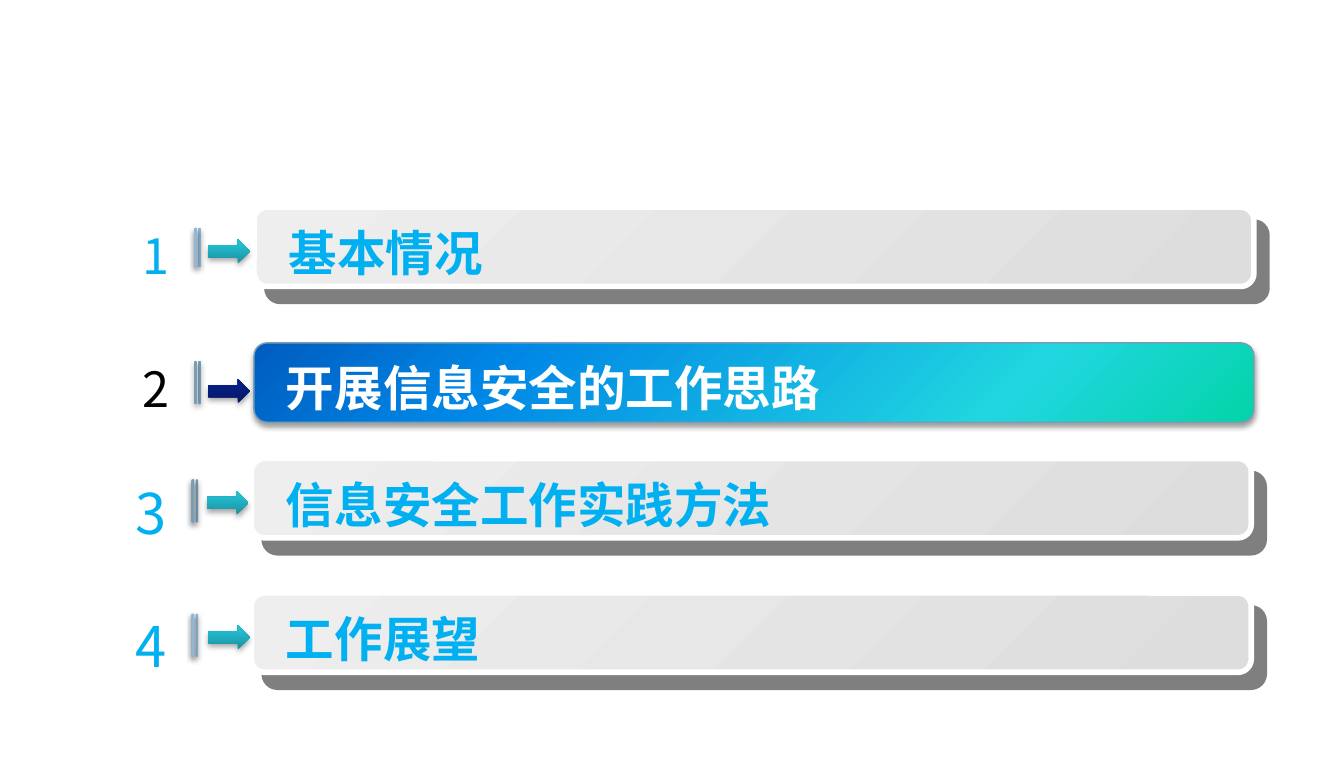
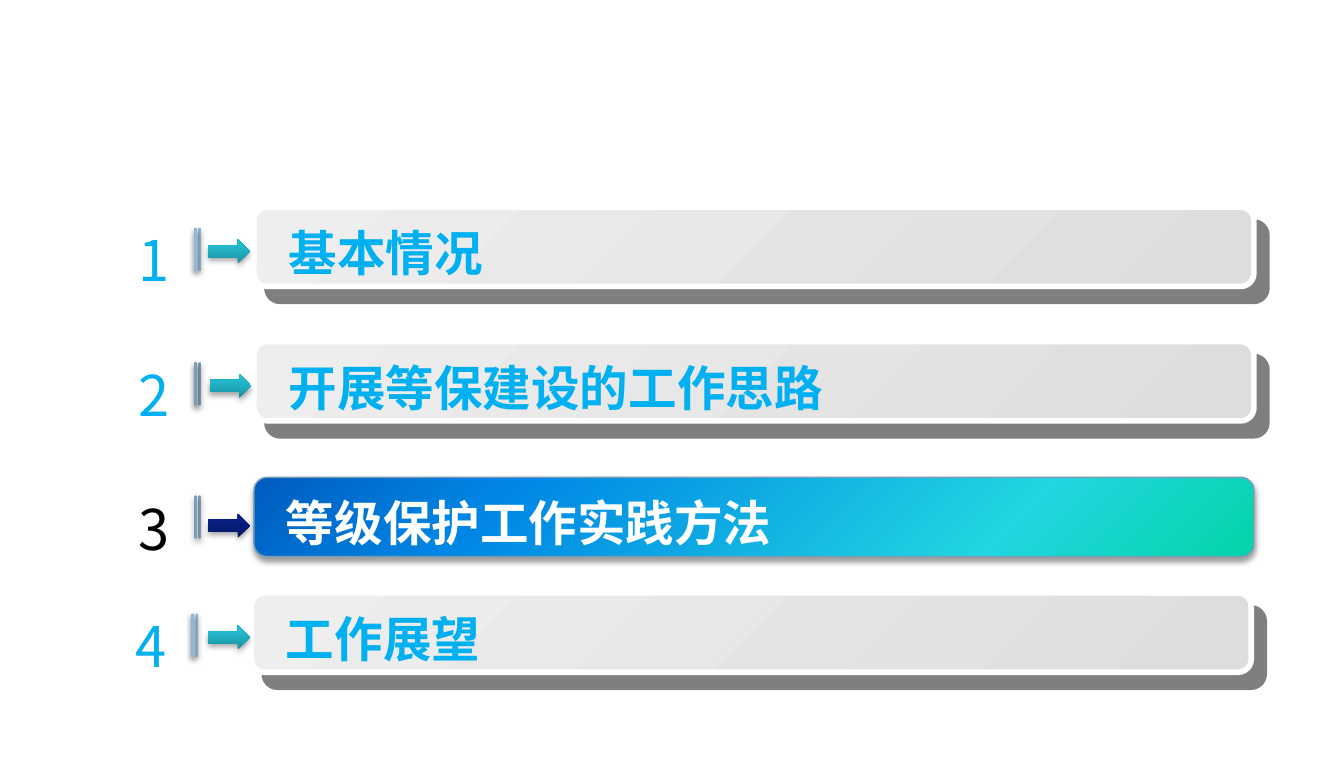
"""Build two agenda slides, each with one highlighted section."""
from dataclasses import dataclass, field
from typing import NamedTuple

from lxml.etree import SubElement
from pptx import Presentation
from pptx.dml.color import RGBColor as RGB
from pptx.enum.shapes import MSO_SHAPE as Shape
from pptx.enum.text import MSO_AUTO_SIZE as AutoSize, MSO_ANCHOR as Anchor, PP_ALIGN as Align
from pptx.oxml import parse_xml
from pptx.oxml.ns import nsdecls, qn
from pptx.util import Inches, Pt

COLUMNS, ROWS = 1000, 563
CELL = Inches(10) // COLUMNS


class Box(NamedTuple):
    left: int
    top: int
    width: int
    height: int


class Gradient(NamedTuple):
    stops: tuple[tuple[int, str], ...]
    angle: int | None = None


class Shadow(NamedTuple):
    alpha: int
    blur: float
    distance: float
    angle: int


class Line(NamedTuple):
    colour: str
    width: float


class Paint(NamedTuple):
    fill: str | Gradient
    line: Line | None
    shadow: Shadow


@dataclass(frozen=True)
class State:
    bar: Paint
    arrow: Paint
    label_colour: str
    number_colour: str
    label_dx: int
    tick_dy: int
    arrow_dy: int
    tick_xs: tuple[int, ...]


SOFT = Shadow(38, 3.1, 1.6, 90)
ARROW_SHADOW = Shadow(35, 3.1, 1.8, 90)
STEEL = Line("7A9DB6", 0.75)


@dataclass(frozen=True)
class Theme:
    font: str = "Noto Sans CJK SC"
    label_size: int = 26
    small: int = 26
    large: int = 30
    pale_tick: Paint = Paint(
        Gradient(((0, "C1E2FF"), (35, "D2EAFF"), (100, "EEF7FF")), 270),
        Line("90B8D6", 0.75), SOFT)
    steel_tick: Paint = Paint(
        Gradient(((0, "B8D8F3"), (35, "CDE3F6"), (100, "EBF4FC")), 270), STEEL, SOFT)
    active_tick: Paint = Paint("0066CC", STEEL, SOFT)
    idle: State = field(default_factory=lambda: State(
        Paint(Gradient(((0, "EEEEEE"), (100, "DDDDDD")), 45),
              Line("FFFFFF", 3), Shadow(50, 0, 10.6, 49)),
        Paint(Gradient(((0, "1B91A1"), (80, "23BDD1"), (100, "20C0D5")), 270),
              None, ARROW_SHADOW),
        "00B0F0", "00B0F0", 16, 16, 24, (-41, -44, -44)))
    active: State = field(default_factory=lambda: State(
        Paint(Gradient(((0, "03D4A8"), (25, "21D6E0"), (75, "0087E6"), (100, "005CBF"))),
              STEEL, SOFT),
        Paint(Gradient(((0, "051866"), (80, "071F85"), (100, "041D88")), 270),
              None, ARROW_SHADOW),
        "FFFFFF", "000000", 14, 14, 27, (-41, -44)))


THEME = Theme()


class Entry(NamedTuple):
    label: str
    left: int
    top: int
    tick: Paint
    state: State = THEME.idle
    number_size: int = THEME.large
    number_dy: int = 9
    label_dy: int = 7
    arrow_left: int = 155
    tick_height: int = 31
    label_height: int = 53


OUTLOOK = Entry("工作展望", 187, 441, THEME.pale_tick)
AGENDAS = (
    (
        Entry("基本情况", 189, 154, THEME.pale_tick, number_size=THEME.small,
              tick_height=28, label_height=97),
        Entry("开展信息安全的工作思路", 189, 255, THEME.active_tick, THEME.active,
              THEME.small, number_dy=7, label_dy=6),
        Entry("信息安全工作实践方法", 187, 341, THEME.steel_tick, number_dy=10,
              arrow_left=154),
        OUTLOOK,
    ),
    (
        Entry("基本情况", 189, 154, THEME.pale_tick),
        Entry("开展等保建设的工作思路", 189, 254, THEME.steel_tick, arrow_left=156),
        Entry("等级保护工作实践方法", 189, 355, THEME.active_tick, THEME.active,
              number_dy=8),
        OUTLOOK,
    ),
)


def place(box: Box) -> list[int]:
    """Turn grid cells into slide lengths."""
    return [cells * CELL for cells in box]


def gradient_xml(gradient: Gradient) -> str:
    """Describe a linear gradient, or a radial one from the lower right corner."""
    stops = "".join(f'<a:gs pos="{pos * 1000}"><a:srgbClr val="{colour}"/></a:gs>'
                    for pos, colour in gradient.stops)
    if gradient.angle is None:
        way = '<a:path path="circle"><a:fillToRect l="100000" t="100000"/></a:path>'
    else:
        way = f'<a:lin ang="{gradient.angle * 60000}" scaled="0"/>'
    return (f'<a:gradFill rotWithShape="1" {nsdecls("a")}>'
            f'<a:gsLst>{stops}</a:gsLst>{way}</a:gradFill>')


def add_shadow(sp, shadow: Shadow) -> None:
    """Give a shape an outer black shadow."""
    sp.shadow.inherit = False
    effects = sp._element.spPr.find(qn("a:effectLst"))
    effects.append(parse_xml(
        f'<a:outerShdw {nsdecls("a")} blurRad="{Pt(shadow.blur)}" '
        f'dist="{Pt(shadow.distance)}" dir="{shadow.angle * 60000}" algn="ctr" '
        f'rotWithShape="0"><a:srgbClr val="000000">'
        f'<a:alpha val="{shadow.alpha * 1000}"/></a:srgbClr></a:outerShdw>'))


def add_shape(shapes, kind: Shape, box: Box, paint: Paint) -> None:
    """Draw a painted preset shape."""
    sp = shapes.add_shape(kind, *place(box))
    if isinstance(paint.fill, Gradient):
        geometry = sp._element.spPr.find(qn("a:prstGeom"))
        geometry.addnext(parse_xml(gradient_xml(paint.fill)))
    else:
        sp.fill.solid()
        sp.fill.fore_color.rgb = RGB.from_string(paint.fill)
    if paint.line:
        sp.line.color.rgb = RGB.from_string(paint.line.colour)
        sp.line.width = Pt(paint.line.width)
    else:
        sp.line.fill.background()
    add_shadow(sp, paint.shadow)


def add_text(shapes, box: Box, text: str, size: int, colour: str,
             bold: bool = False, align: Align = Align.LEFT) -> None:
    """Write one line of text in a box that grows."""
    tf = shapes.add_textbox(*place(box)).text_frame
    frame_format = {"word_wrap": True, "auto_size": AutoSize.SHAPE_TO_FIT_TEXT,
                    "vertical_anchor": Anchor.TOP}
    for name, value in frame_format.items():
        setattr(tf, name, value)
    p = tf.paragraphs[0]
    p.alignment = align
    r = p.add_run()
    r.text = text
    r.font.color.rgb = RGB.from_string(colour)
    for name, value in {"name": THEME.font, "size": Pt(size), "bold": bold}.items():
        setattr(r.font, name, value)
    SubElement(r._r.get_or_add_rPr(), qn("a:ea"), typeface=THEME.font)


def add_entry(s, number: int, entry: Entry) -> None:
    """Draw one agenda row as a group."""
    shapes = s.shapes.add_group_shape().shapes
    left, top, state = entry.left, entry.top, entry.state
    add_shape(shapes, Shape.ROUNDED_RECTANGLE, Box(left, top, 744, 59), state.bar)
    add_text(shapes, Box(left + state.label_dx, top + entry.label_dy, 700, entry.label_height),
             entry.label, THEME.label_size, state.label_colour, bold=True)
    for dx in state.tick_xs:
        add_shape(shapes, Shape.ROUNDED_RECTANGLE,
                  Box(left + dx, top + state.tick_dy, 1, entry.tick_height), entry.tick)
    add_text(shapes, Box(left - 100, top + entry.number_dy, 47, 2 * entry.number_size),
             str(number), entry.number_size, state.number_colour, align=Align.RIGHT)
    add_shape(shapes, Shape.RIGHT_ARROW,
              Box(entry.arrow_left, top + state.arrow_dy, 31, 18), state.arrow)


def main() -> None:
    """Build and save the deck."""
    prs = Presentation()
    prs.slide_width, prs.slide_height = COLUMNS * CELL, ROWS * CELL
    for agenda in AGENDAS:
        s = prs.slides.add_slide(prs.slide_layouts[6])
        for number, entry in enumerate(agenda, 1):
            add_entry(s, number, entry)
    prs.save("out.pptx")


if __name__ == "__main__":
    main()
